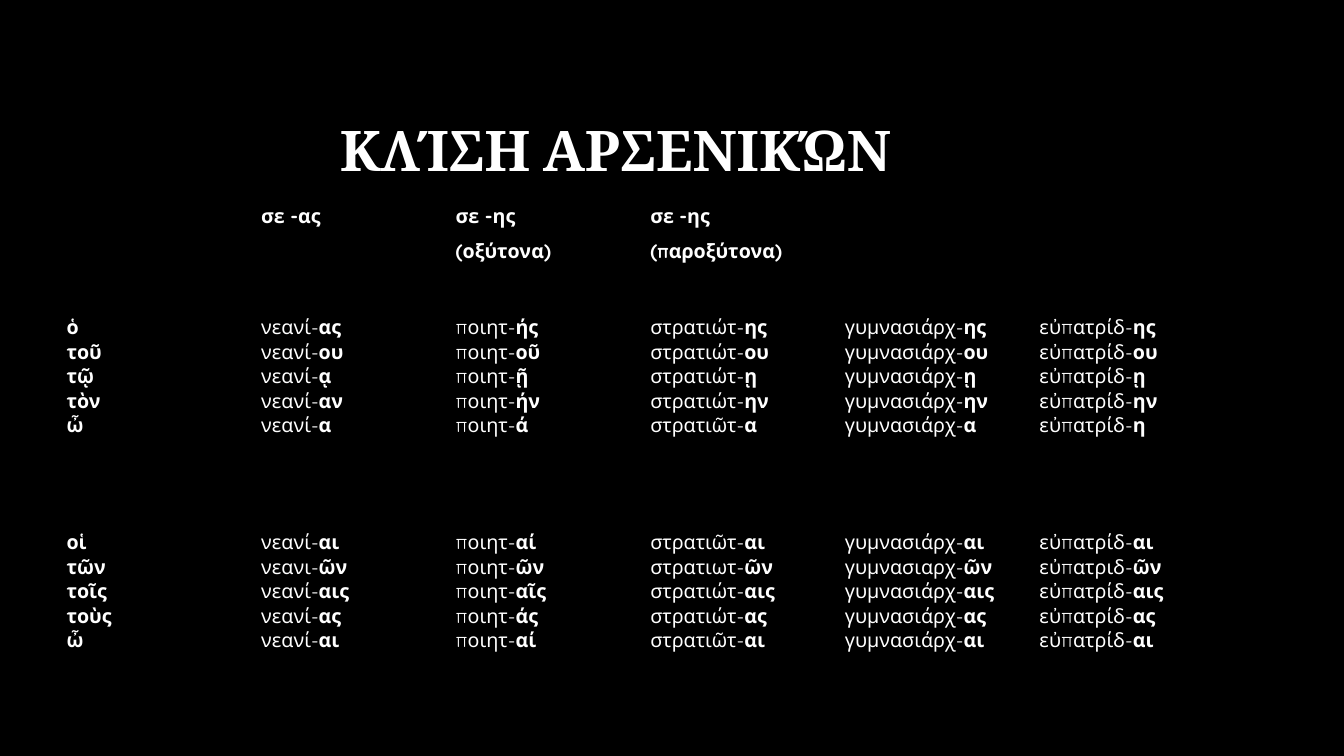
import pptx
import pptx.dml.color
import pptx.enum.text
import pptx.util

BLACK = pptx.dml.color.RGBColor(0, 0, 0)
WHITE = pptx.dml.color.RGBColor(255, 255, 255)
PLAIN = "{2D5ABB26-0587-4C30-8999-92F81FD0307C}"  # no style, no grid
MIDDLE = pptx.enum.text.MSO_ANCHOR.MIDDLE
Inches, Pt = pptx.util.Inches, pptx.util.Pt

TITLE = "ΚΛΊΣΗ ΑΡΣΕΝΙΚΏΝ"
# One string per cell, one word per line; endings after the hyphen are bold.
HEADS = [
    ["", "σε -ας", "σε -ης", "σε -ης", "", ""],
    ["", "", "(οξύτονα)", "(παροξύτονα)", "", ""],
]
FORMS = [
    ["ὁ τοῦ τῷ τὸν ὦ",
     "νεανί-ας νεανί-ου νεανί-ᾳ νεανί-αν νεανί-α",
     "ποιητ-ής ποιητ-οῦ ποιητ-ῇ ποιητ-ήν ποιητ-ά",
     "στρατιώτ-ης στρατιώτ-ου στρατιώτ-ῃ στρατιώτ-ην στρατιῶτ-α",
     "γυμνασιάρχ-ης γυμνασιάρχ-ου γυμνασιάρχ-ῃ γυμνασιάρχ-ην γυμνασιάρχ-α",
     "εὐπατρίδ-ης εὐπατρίδ-ου εὐπατρίδ-ῃ εὐπατρίδ-ην εὐπατρίδ-η"],
    ["οἱ τῶν τοῖς τοὺς ὦ",
     "νεανί-αι νεανι-ῶν νεανί-αις νεανί-ας νεανί-αι",
     "ποιητ-αί ποιητ-ῶν ποιητ-αῖς ποιητ-άς ποιητ-αί",
     "στρατιῶτ-αι στρατιωτ-ῶν στρατιώτ-αις στρατιώτ-ας στρατιῶτ-αι",
     "γυμνασιάρχ-αι γυμνασιαρχ-ῶν γυμνασιάρχ-αις γυμνασιάρχ-ας γυμνασιάρχ-αι",
     "εὐπατρίδ-αι εὐπατριδ-ῶν εὐπατρίδ-αις εὐπατρίδ-ας εὐπατρίδ-αι"],
]
COLS = 6
COL = 1.93
ROWS = [0.35, 0.35, 2.13, 2.13]


def style(para, name, size):
    font = para.font
    font.name, font.size, font.bold = name, Pt(size), True
    font.color.rgb = WHITE


def place(shape, *box):
    shape.left, shape.top, shape.width, shape.height = map(Inches, box)


def add_forms(para, text):
    for i, word in enumerate(text.split()):
        if i:
            para.add_line_break()
        stem, dash, end = word.rpartition("-")
        if stem:
            run = para.add_run()
            run.text = stem + dash
            run.font.bold = False
        para.add_run().text = end


def add_title(slide):
    title = slide.shapes.title
    place(title, 0.91, 0.82, 10.39, 1.41)
    frame = title.text_frame
    frame.text = TITLE
    frame.vertical_anchor = MIDDLE
    para = frame.paragraphs[0]
    para.alignment = pptx.enum.text.PP_ALIGN.CENTER
    para.line_spacing = 0.9
    style(para, "Cambria", 40)


def add_grid(slide):
    box = map(Inches, (0.58, 1.97, COLS * COL, sum(ROWS)))
    frame = slide.shapes.add_table(len(ROWS), COLS, *box)
    table = frame.table
    table.first_row = table.horz_banding = False
    frame.element.xpath(".//a:tableStyleId")[0].text = PLAIN
    for col in table.columns:
        col.width = Inches(COL)
    for r, (high, texts) in enumerate(zip(ROWS, HEADS + FORMS)):
        table.rows[r].height = Inches(high)
        for c, text in enumerate(texts):
            cell = table.cell(r, c)
            cell.fill.background()
            cell.vertical_anchor = MIDDLE
            cell.margin_left = cell.margin_right = Inches(0.08)
            cell.margin_top = cell.margin_bottom = Inches(0.04)
            para = cell.text_frame.paragraphs[0]
            style(para, "Quicksand", 14)
            if r < len(HEADS):
                if text:
                    para.add_run().text = text
            else:
                add_forms(para, text)
    for r in range(len(HEADS)):
        table.cell(r, 3).merge(table.cell(r, 5))


def main():
    deck = pptx.Presentation()
    deck.slide_width, deck.slide_height = Inches(13.33), Inches(7.5)
    slide = deck.slides.add_slide(deck.slide_layouts[5])
    fill = slide.background.fill
    fill.solid()
    fill.fore_color.rgb = BLACK
    add_title(slide)
    add_grid(slide)
    deck.save("out.pptx")


if __name__ == "__main__":
    main()
